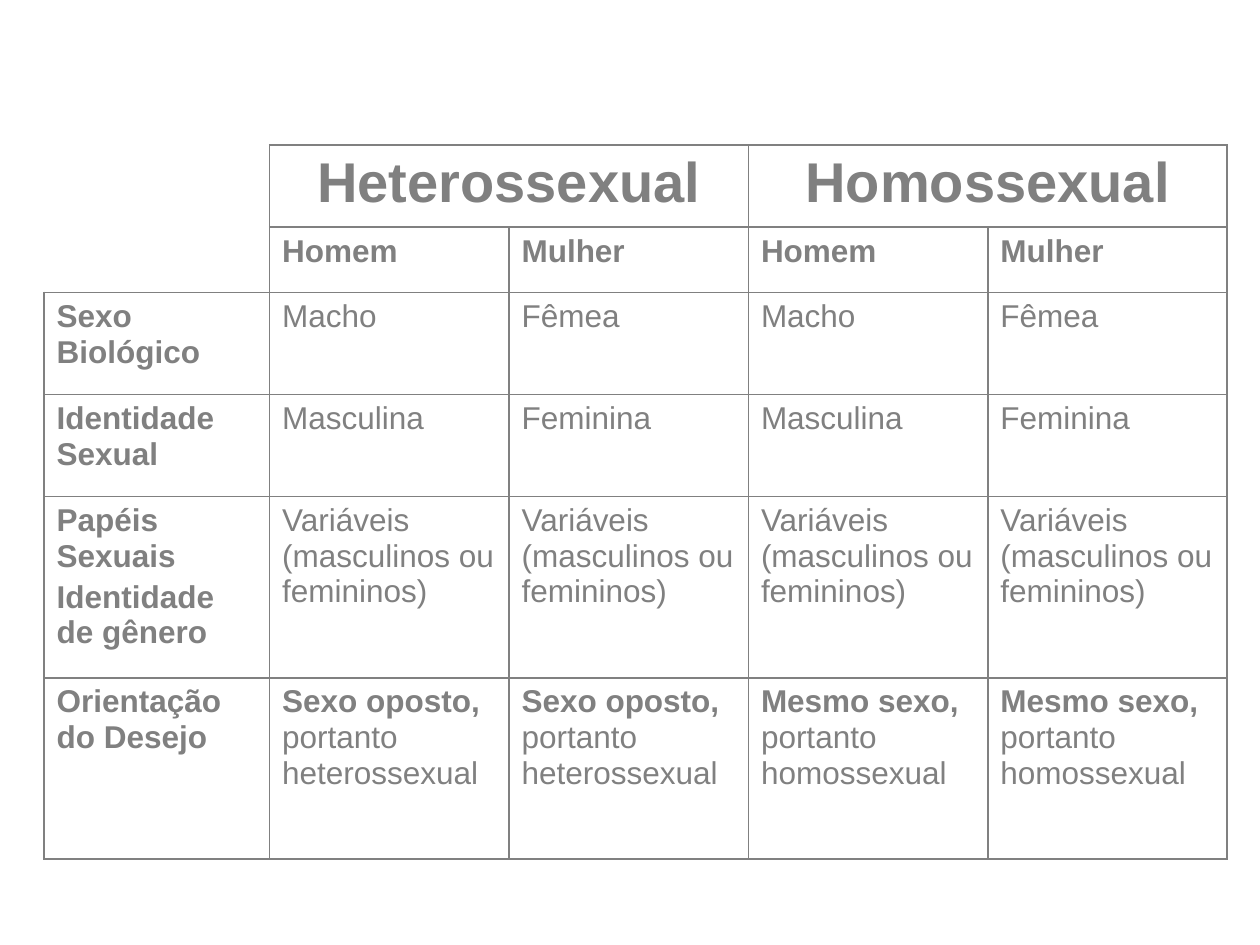
from dataclasses import dataclass

from lxml import etree
from pptx import Presentation
from pptx.dml.color import RGBColor
from pptx.enum.text import PP_ALIGN as Align
from pptx.oxml.ns import qn
from pptx.util import Inches, Pt


@dataclass(frozen=True)
class Theme:
    font: str = "Arial"
    gray: str = "808080"
    heading: int = 32
    body: int = 18
    border: int = 1


theme = Theme()


def set_borders(cell, drawn_sides):
    """Draw the given sides of a cell and leave the others without a line."""
    properties = cell._tc.get_or_add_tcPr()
    for side in "LRTB":
        line = etree.SubElement(properties, qn(f"a:ln{side}"), w=str(Pt(theme.border)))
        if side in drawn_sides:
            fill = etree.SubElement(line, qn("a:solidFill"))
            etree.SubElement(fill, qn("a:srgbClr"), val=theme.gray)
        else:
            etree.SubElement(line, qn("a:noFill"))


def write_cell(cell, paragraphs, size=theme.body, align=Align.LEFT):
    """Fill a cell with paragraphs, each a list of (text, bold) runs."""
    frame = cell.text_frame
    for index, runs in enumerate(paragraphs):
        paragraph = frame.add_paragraph() if index else frame.paragraphs[0]
        paragraph.alignment = align
        paragraph.line_spacing = 1.01
        paragraph.space_before = Pt(3 if index else 0)
        for text, bold in runs:
            run = paragraph.add_run()
            run.text = text
            run.font.name = theme.font
            run.font.size = Pt(size)
            run.font.bold = bold
            run.font.color.rgb = RGBColor.from_string(theme.gray)


# Content
orientations = ["Heterossexual", "Homossexual"]
sexes = ["Homem", "Mulher"]
variable_roles = [("Variáveis (masculinos ou femininos)", False)]
opposite_sex = [("Sexo oposto, ", True), ("portanto heterossexual", False)]
same_sex = [("Mesmo sexo, ", True), ("portanto homossexual", False)]
dimensions = [
    (["Sexo Biológico"], [[("Macho", False)], [("Fêmea", False)]] * 2),
    (["Identidade Sexual"], [[("Masculina", False)], [("Feminina", False)]] * 2),
    (["Papéis Sexuais", "Identidade de gênero"], [variable_roles] * 4),
    (["Orientação do Desejo"], [opposite_sex] * 2 + [same_sex] * 2),
]

# Slide
deck = Presentation()
deck.slide_width, deck.slide_height = Inches(10), Inches(7.5)
slide = deck.slides.add_slide(deck.slide_layouts[6])

# Table grid
column_widths = [1.79] + [1.9] * 4
row_heights = [0.65, 0.52, 0.81, 0.81, 1.44, 1.44]
comparison = slide.shapes.add_table(
    len(row_heights), len(column_widths), Inches(0.35), Inches(1.15),
    Inches(sum(column_widths)), Inches(sum(row_heights))).table
comparison.first_row = False
comparison.horz_banding = False
for column, width in zip(comparison.columns, column_widths):
    column.width = Inches(width)
for row, height in zip(comparison.rows, row_heights):
    row.height = Inches(height)

# Borders: the empty corner keeps only its right and bottom lines
for r in range(len(row_heights)):
    for c in range(len(column_widths)):
        cell = comparison.cell(r, c)
        set_borders(cell, "RB" if c == 0 and r < 2 else "LRTB")
        cell.fill.background()
        cell.margin_left = cell.margin_right = Inches(0.1)
        cell.margin_top = cell.margin_bottom = Inches(0.05)
comparison.cell(0, 0).merge(comparison.cell(1, 0))

# Column headings
for group, orientation in enumerate(orientations):
    first = 1 + group * len(sexes)
    heading = comparison.cell(0, first)
    heading.merge(comparison.cell(0, first + 1))
    write_cell(heading, [[(orientation, True)]], theme.heading, Align.CENTER)
    for offset, sex in enumerate(sexes):
        write_cell(comparison.cell(1, first + offset), [[(sex, True)]])

# Dimension rows
for r, (labels, values) in enumerate(dimensions, start=2):
    write_cell(comparison.cell(r, 0), [[(label, True)] for label in labels])
    for c, value in enumerate(values, start=1):
        write_cell(comparison.cell(r, c), [value])

deck.save("out.pptx")
